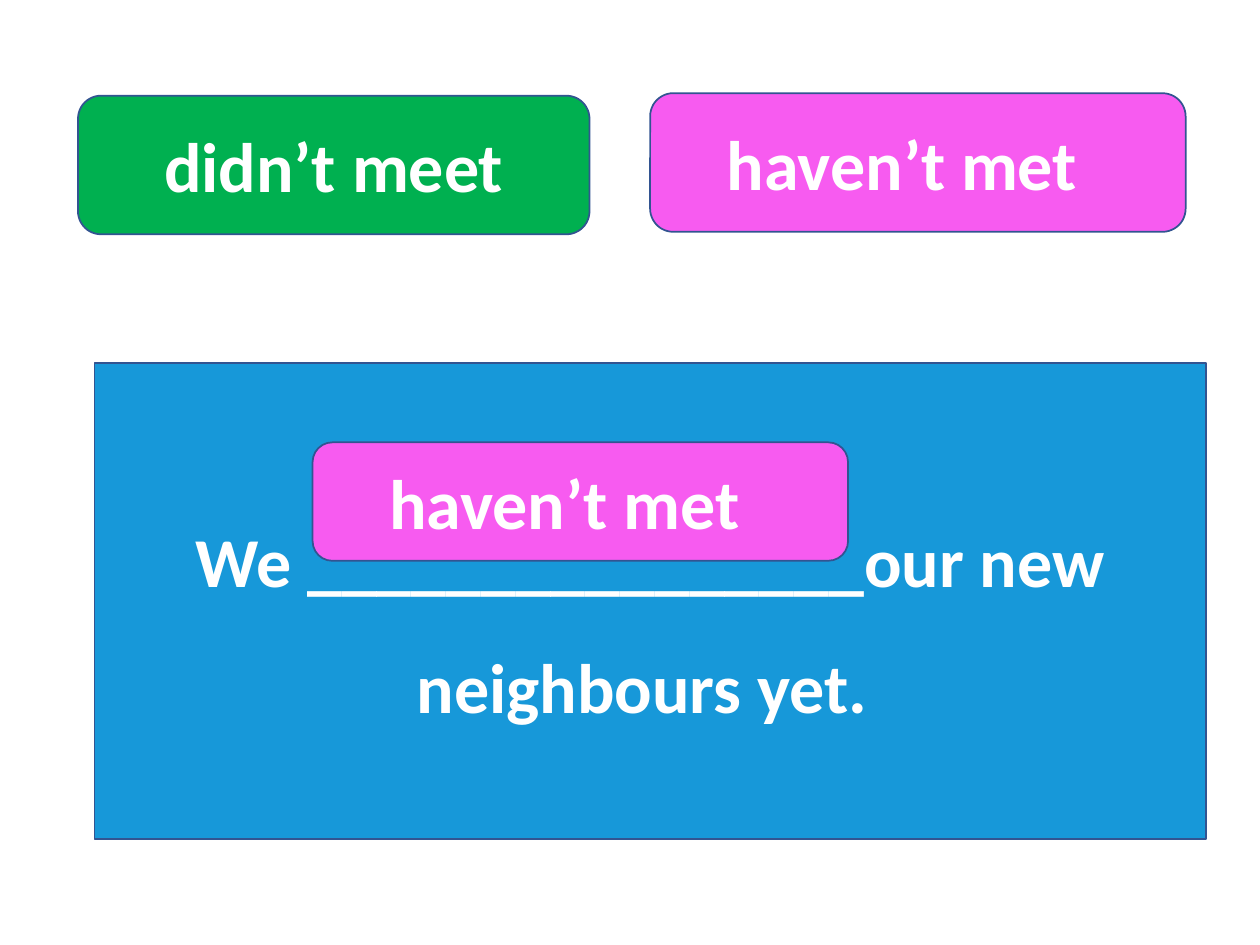
from pptx import Presentation
from pptx.dml.color import RGBColor
from pptx.enum.shapes import MSO_SHAPE as Preset
from pptx.enum.text import MSO_ANCHOR as Anchor, PP_ALIGN as Align
from pptx.util import Pt

GREEN = RGBColor(0x00, 0xB0, 0x50)
PINK = RGBColor(0xF7, 0x5B, 0xF0)
BLUE = RGBColor(0x17, 0x98, 0xD9)
OUTLINE = RGBColor(0x32, 0x54, 0x91)
WHITE = RGBColor(0xFF, 0xFF, 0xFF)
INSET = 7.2
ANSWER_INSET = 25.2


def add_panel(slide, preset, box, text, fill, right_inset=INSET, spacing=1.0):
    """Draw a filled, outlined shape with bold centred text in the given box."""
    shape = slide.shapes.add_shape(preset, *map(Pt, box))
    shape.shadow.inherit = False
    shape.fill.solid()
    shape.fill.fore_color.rgb = fill
    shape.line.color.rgb = OUTLINE
    shape.line.width = Pt(1)
    frame = shape.text_frame
    frame.word_wrap = True
    frame.vertical_anchor = Anchor.MIDDLE
    frame.margin_left = Pt(INSET)
    frame.margin_right = Pt(right_inset)
    frame.text = text
    paragraph = frame.paragraphs[0]
    paragraph.alignment = Align.CENTER
    paragraph.line_spacing = spacing
    font = paragraph.runs[0].font
    font.name = "Calibri"
    font.size = Pt(40)
    font.bold = True
    font.color.rgb = WHITE


def add_choices(slide, left, top):
    """Place the two answer choices side by side."""
    add_panel(slide, Preset.ROUNDED_RECTANGLE, (left, top + 1.4, 292.3, 79.2),
              "didn’t meet", GREEN)
    add_panel(slide, Preset.ROUNDED_RECTANGLE, (left + 326.9, top, 306, 79.2),
              "haven’t met", PINK, ANSWER_INSET)


def add_sentence(slide, left, top, width, height):
    """Place the gapped sentence with the correct answer over its gap."""
    add_panel(slide, Preset.RECTANGLE, (left, top, width, height),
              "We ________________our new neighbours yet. ", BLUE, spacing=1.5)
    add_panel(slide, Preset.ROUNDED_RECTANGLE, (left + 124.6, top + 45.4, 306, 67.7),
              "haven’t met", PINK, ANSWER_INSET)


def main():
    """Build the grammar exercise slide and save it."""
    presentation = Presentation()
    presentation.slide_width = Pt(720)
    presentation.slide_height = Pt(540)
    slide = presentation.slides.add_slide(presentation.slide_layouts[6])
    add_choices(slide, 44.6, 53.3)
    add_sentence(slide, 54, 207.4, 635, 272.2)
    presentation.save("out.pptx")


if __name__ == "__main__":
    main()
